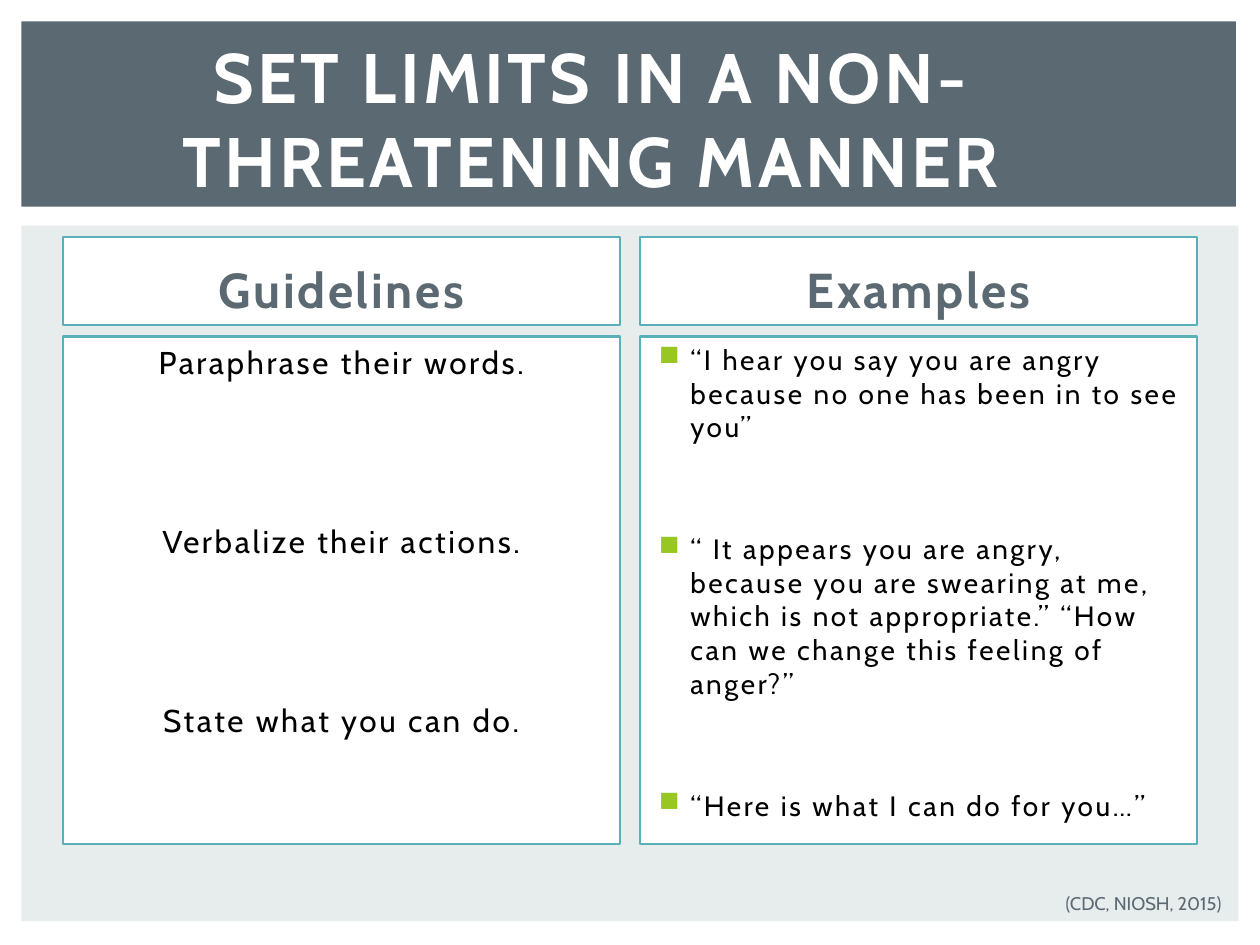
from dataclasses import dataclass
from lxml import etree
from pptx import Presentation
from pptx import util as u
from pptx.dml.color import RGBColor
from pptx.enum import shapes, text
from pptx.oxml.ns import qn


@dataclass(frozen=True)
class Theme:
    font: str = "Cabin"
    slate: str = "5B6973"
    mist: str = "E7ECED"
    teal: str = "59B0B9"
    green: str = "98C723"
    white: str = "FFFFFF"
    black: str = "000000"
    title: float = 40
    heading: float = 28
    guideline: float = 18
    example: float = 16
    source: float = 10.5


def add_rect(left, top, width, height, fill, line=None):
    sp = s.shapes.add_shape(
        shapes.MSO_SHAPE.RECTANGLE,
        u.Inches(left), u.Inches(top), u.Inches(width), u.Inches(height))
    sp.shadow.inherit = False
    sp.fill.solid()
    sp.fill.fore_color.rgb = RGBColor.from_string(fill)
    if line:
        sp.line.color.rgb = RGBColor.from_string(line)
        sp.line.width = u.Pt(1.5)
    else:
        sp.line.fill.background()
    return sp


def write(sp, lines, size, color, anchor="TOP", align="CENTER", bold=False, tracking=150, gap=0):
    tf = sp.text_frame
    tf.word_wrap = True
    tf.vertical_anchor = text.MSO_ANCHOR[anchor]
    tf.text = "\n".join(lines)
    for i, p in enumerate(tf.paragraphs):
        p.alignment = text.PP_ALIGN[align]
        p.space_before = u.Pt(gap if i else 0)
        r = p.runs[0]
        r.font.name = theme.font
        r.font.size = u.Pt(size)
        r.font.bold = bold
        r.font.color.rgb = RGBColor.from_string(color)
        r.font._element.set("spc", str(tracking))


theme = Theme()
prs = Presentation()
prs.slide_width, prs.slide_height = u.Inches(10), u.Inches(7.5)
s = prs.slides.add_slide(prs.slide_layouts[6])

add_rect(0.17, 1.79, 9.66, 5.52, theme.mist)
add_rect(0.17, 0.17, 9.64, 1.47, theme.slate)

columns = [
    ("Guidelines", theme.guideline, "CENTER", 80.7, [
        "Paraphrase their words.",
        "Verbalize their actions.",
        "State what you can do.",
    ]),
    ("Examples", theme.example, "LEFT", 50.5, [
        "“I hear you say you are angry because no one has been in to see you”",
        "“ It appears you are angry, because you are swearing at me, which is not "
        "appropriate.” “How can we change this feeling of anger?”",
        "“Here is what I can do for you…”",
    ]),
]
for i, (heading, size, align, gap, lines) in enumerate(columns):
    left = 0.5 + i * 4.58
    head = add_rect(left, 1.88, 4.42, 0.7, theme.white, theme.teal)
    write(head, [heading], theme.heading, theme.slate, anchor="BOTTOM", bold=True)
    body = add_rect(left, 2.67, 4.42, 4.03, theme.white, theme.teal)
    write(body, lines, size, theme.black, align=align, gap=gap)

for p in body.text_frame.paragraphs:
    pPr = p._p.get_or_add_pPr()
    pPr.set("marL", str(u.Inches(0.3)))
    pPr.set("indent", str(u.Inches(-0.25)))
    color = etree.SubElement(pPr, qn("a:buClr"))
    etree.SubElement(color, qn("a:srgbClr"), val=theme.green)
    etree.SubElement(pPr, qn("a:buChar"), char="■")

title = s.shapes.add_textbox(u.Inches(0.42), u.Inches(0.39), u.Inches(8.54), u.Inches(1.09))
write(title, ["SET LIMITS IN A NON-THREATENING MANNER"], theme.title, theme.white,
      anchor="MIDDLE", bold=True, tracking=200)

source = s.shapes.add_textbox(u.Inches(8.36), u.Inches(7.03), u.Inches(1.75), u.Inches(0.28))
write(source, ["(CDC, NIOSH, 2015)"], theme.source, theme.slate, align="LEFT", tracking=0)

prs.save("out.pptx")
